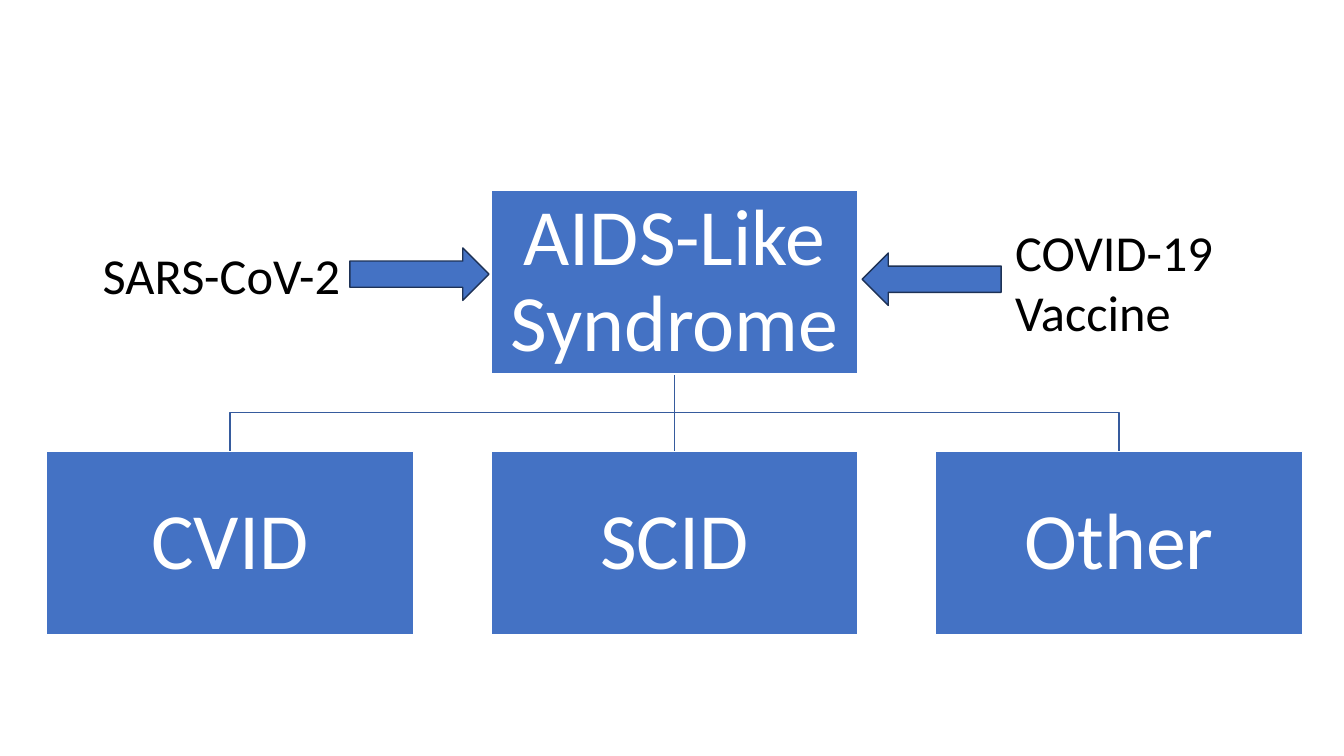
from dataclasses import dataclass

import pptx
import pptx.dml.color
import pptx.enum.shapes
import pptx.enum.text
import pptx.oxml.ns
import pptx.shapes.autoshape
import pptx.shapes.shapetree
import pptx.util
from lxml import etree
from pptx.util import Inches

BLUE = pptx.dml.color.RGBColor(0x44, 0x72, 0xC4)
BRANCH_BLUE = pptx.dml.color.RGBColor(0x36, 0x5B, 0x9D)
ARROW_EDGE = pptx.dml.color.RGBColor(0x1E, 0x32, 0x56)
WHITE = pptx.dml.color.RGBColor(0xFF, 0xFF, 0xFF)
BLACK = pptx.dml.color.RGBColor(0, 0, 0)
FONT = "Calibri"
NODE_WIDTH, NODE_HEIGHT = 3.64, 1.82
NODE_PITCH = 4.41
NODE_LEFT = 0.46
SYNDROME_TOP, DISORDER_TOP = 1.89, 4.48
BRANCH_TOP = SYNDROME_TOP + NODE_HEIGHT
BRANCH_MIDDLE = (BRANCH_TOP + DISORDER_TOP) / 2


@dataclass(frozen=True)
class Node:
    label: str
    column: int
    top: float

    @property
    def left(self) -> float:
        return NODE_LEFT + self.column * NODE_PITCH

    @property
    def center(self) -> float:
        return self.left + NODE_WIDTH / 2


@dataclass(frozen=True)
class Cause:
    lines: tuple[str, ...]
    left: float
    top: float
    width: float
    height: float
    arrow_left: float
    arrow_top: float
    arrow_rotation: int


SYNDROME = Node("AIDS-Like Syndrome", 1, SYNDROME_TOP)
DISORDERS = [
    Node(label, column, DISORDER_TOP)
    for column, label in enumerate(("CVID", "SCID", "Other"))
]
CAUSES = [
    Cause(("SARS-CoV-2",), 0.92, 2.37, 2.61, 0.71, 3.47, 2.46, 0),
    Cause(("COVID-19", "Vaccine"), 9.97, 2.14, 2.3, 1.31, 8.55, 2.51, 180),
]


def style_font(font: pptx.text.text.Font, size: int, color: pptx.dml.color.RGBColor) -> None:
    font.name = FONT
    font.size = pptx.util.Pt(size)
    font.color.rgb = color


def paint(shape: pptx.shapes.autoshape.Shape, edge: pptx.dml.color.RGBColor) -> None:
    shape.shadow.inherit = False
    shape.fill.solid()
    shape.fill.fore_color.rgb = BLUE
    shape.line.color.rgb = edge
    shape.line.width = pptx.util.Pt(1)


def draw_branch(shapes: pptx.shapes.shapetree.SlideShapes, parent: Node, child: Node) -> None:
    start_x, end_x = Inches(parent.center), Inches(child.center)
    top, middle, bottom = Inches(BRANCH_TOP), Inches(BRANCH_MIDDLE), Inches(child.top)
    if parent.column == child.column:
        branch = shapes.add_connector(
            pptx.enum.shapes.MSO_CONNECTOR.STRAIGHT, start_x, top, end_x, bottom
        )
        etree.SubElement(branch._element.spPr, pptx.oxml.ns.qn("a:effectLst"))
    else:
        builder = shapes.build_freeform(start_x, top)
        builder.add_line_segments(
            [(start_x, middle), (end_x, middle), (end_x, bottom)], close=False
        )
        branch = builder.convert_to_shape()
        branch.shadow.inherit = False
        branch.fill.background()
    branch.line.color.rgb = BRANCH_BLUE
    branch.line.width = pptx.util.Pt(1)


def draw_node(shapes: pptx.shapes.shapetree.SlideShapes, node: Node) -> None:
    box = shapes.add_shape(
        pptx.enum.shapes.MSO_SHAPE.RECTANGLE,
        Inches(node.left), Inches(node.top), Inches(NODE_WIDTH), Inches(NODE_HEIGHT),
    )
    paint(box, WHITE)
    frame = box.text_frame
    frame.word_wrap = True
    frame.vertical_anchor = pptx.enum.text.MSO_ANCHOR.MIDDLE
    frame.margin_left = frame.margin_right = Inches(0.04)
    frame.margin_top = frame.margin_bottom = Inches(0.04)
    paragraph = frame.paragraphs[0]
    paragraph.text = node.label
    paragraph.alignment = pptx.enum.text.PP_ALIGN.CENTER
    paragraph.line_spacing = 0.9
    style_font(paragraph.font, 57, WHITE)


def draw_cause(shapes: pptx.shapes.shapetree.SlideShapes, cause: Cause) -> None:
    caption = shapes.add_textbox(
        Inches(cause.left), Inches(cause.top), Inches(cause.width), Inches(cause.height)
    )
    frame = caption.text_frame
    frame.word_wrap = False
    frame.auto_size = pptx.enum.text.MSO_AUTO_SIZE.SHAPE_TO_FIT_TEXT
    frame.text = "\n".join(cause.lines)
    for paragraph in frame.paragraphs:
        style_font(paragraph.font, 36, BLACK)
    arrow = shapes.add_shape(
        pptx.enum.shapes.MSO_SHAPE.RIGHT_ARROW,
        Inches(cause.arrow_left), Inches(cause.arrow_top), Inches(1.38), Inches(0.52),
    )
    arrow.rotation = cause.arrow_rotation
    paint(arrow, ARROW_EDGE)


def main() -> None:
    presentation = pptx.Presentation()
    presentation.slide_width = Inches(13.33)
    presentation.slide_height = Inches(7.5)
    slide = presentation.slides.add_slide(presentation.slide_layouts[6])
    for disorder in reversed(DISORDERS):
        draw_branch(slide.shapes, SYNDROME, disorder)
    for node in (SYNDROME, *DISORDERS):
        draw_node(slide.shapes, node)
    for cause in CAUSES:
        draw_cause(slide.shapes, cause)
    presentation.save("out.pptx")


if __name__ == "__main__":
    main()
